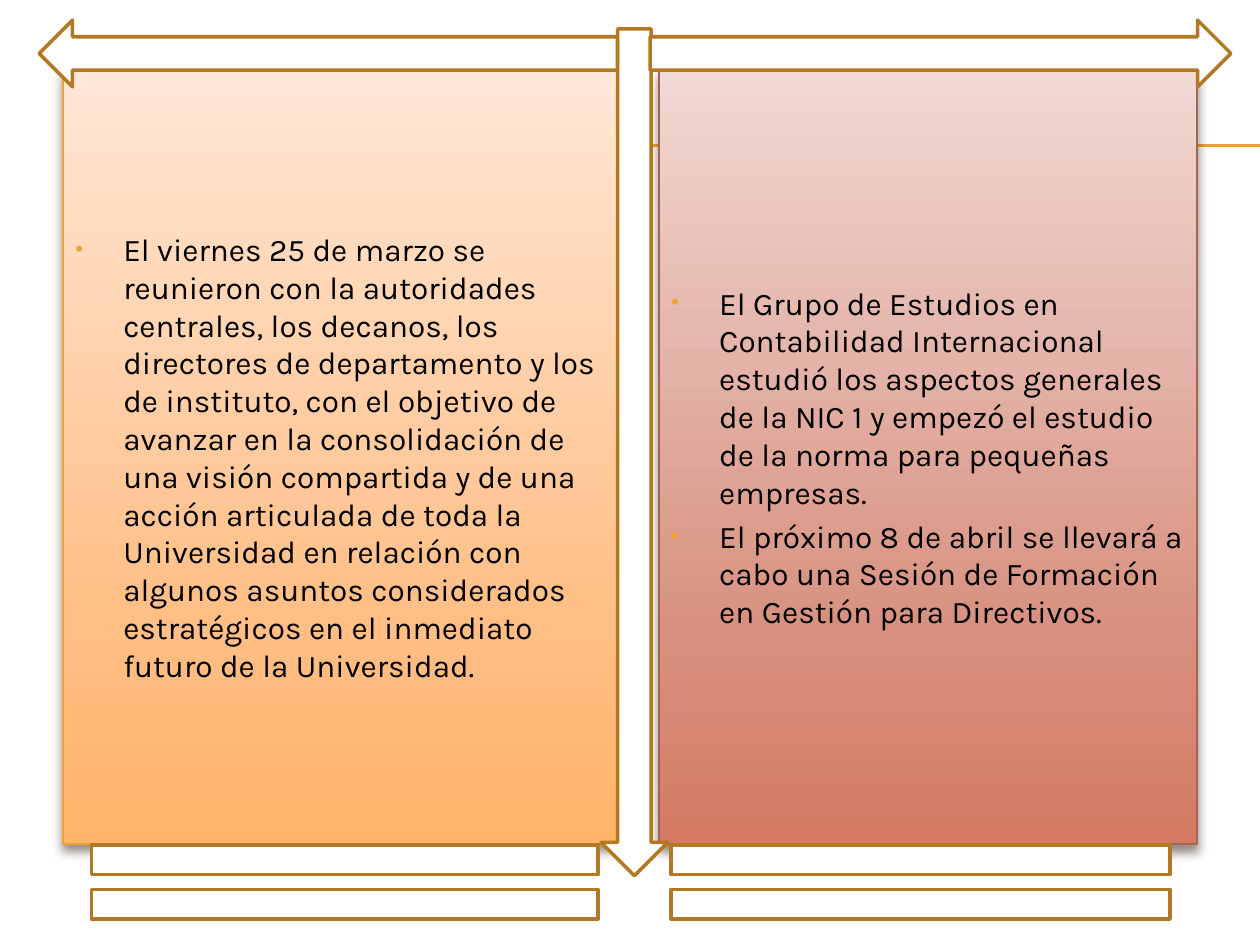
from copy import deepcopy

from pptx import Presentation
from pptx.dml.color import RGBColor
from pptx.enum.shapes import MSO_CONNECTOR, MSO_SHAPE
from pptx.enum.text import MSO_ANCHOR, PP_ALIGN
from pptx.oxml.ns import qn
from pptx.util import Inches, Pt
from lxml.etree import SubElement


def color(value):
    return RGBColor.from_string(value)


class Sheet:
    font = "Karla"
    text_size = 18
    accent = "F0A22E"
    outline = "B27822"
    shadow = "4E3B30"

    def __init__(self, page):
        self.page = page

    def rule(self, top):
        line = self.page.shapes.add_connector(
            MSO_CONNECTOR.STRAIGHT, Inches(0.56), Inches(top), Inches(10), Inches(top)
        )
        line.line.color.rgb = color(self.accent)
        line.line.width = Pt(0.75)
        SubElement(line.element.spPr, qn("a:effectLst"))

    def shape(self, kind, left, top, width, height, line, weight):
        shape = self.page.shapes.add_shape(
            kind, Inches(left), Inches(top), Inches(width), Inches(height)
        )
        shape.line.color.rgb = color(line)
        shape.line.width = Pt(weight)
        shape.shadow.inherit = False
        return shape

    def symbol(self, kind, left, top, width, height):
        shape = self.shape(kind, left, top, width, height, self.outline, 2)
        shape.fill.solid()
        shape.fill.fore_color.rgb = color("FFFFFF")

    def gradient(self, shape, stops):
        shape.fill.gradient()
        shape.fill.gradient_angle = 270
        stop_list = shape.element.spPr.find(qn("a:gradFill")).find(qn("a:gsLst"))
        stop_list.append(deepcopy(stop_list[0]))
        for stop, (position, value) in zip(shape.fill.gradient_stops, stops):
            stop.position = position
            stop.color.rgb = color(value)

    def drop_shadow(self, shape):
        effects = shape.element.spPr.find(qn("a:effectLst"))
        outer = SubElement(
            effects, qn("a:outerShdw"), blurRad=str(Pt(6)), dist=str(Pt(4)),
            dir="5400000", rotWithShape="0",
        )
        tint = SubElement(outer, qn("a:srgbClr"), val=self.shadow)
        SubElement(tint, qn("a:alpha"), val="60000")

    def bullet(self, para):
        properties = para._p.get_or_add_pPr()
        properties.set("marL", str(Inches(0.38)))
        properties.set("indent", str(-Inches(0.38)))
        tint = SubElement(properties, qn("a:buClr"))
        SubElement(tint, qn("a:srgbClr"), val=self.accent)
        SubElement(properties, qn("a:buSzPct"), val="70000")
        SubElement(properties, qn("a:buFont"), typeface="Arial")
        SubElement(properties, qn("a:buChar"), char="•")

    def panel(self, left, width, line, stops, texts):
        box = self.shape(MSO_SHAPE.RECTANGLE, left, 0.55, width, 6.15, line, 0.79)
        self.gradient(box, stops)
        self.drop_shadow(box)
        frame = box.text_frame
        frame.word_wrap = True
        frame.vertical_anchor = MSO_ANCHOR.MIDDLE
        frame.text = "\n".join(texts)
        for index, para in enumerate(frame.paragraphs):
            self.bullet(para)
            para.alignment = PP_ALIGN.LEFT
            if index:
                para.space_before = Pt(3.6)
            for span in para.runs:
                span.font.name = self.font
                span.font.size = Pt(self.text_size)
                span.font.color.rgb = color("000000")


def main():
    deck = Presentation()
    deck.slide_width = Inches(10)
    deck.slide_height = Inches(7.5)
    sheet = Sheet(deck.slides.add_slide(deck.slide_layouts[6]))

    for top in (1.15, 1.16):
        sheet.rule(top)

    sheet.panel(
        0.5, 4.42, "F0A22E",
        [(0, "FFE7D7"), (0.72, "FFBE84"), (1, "FFB468")],
        [
            "El viernes 25 de marzo se reunieron con la autoridades centrales, "
            "los decanos, los directores de departamento y los de instituto, "
            "con el objetivo de avanzar en la consolidación de una visión "
            "compartida y de una acción articulada de toda la Universidad en "
            "relación con algunos asuntos considerados estratégicos en el "
            "inmediato futuro de la Universidad."
        ],
    )
    sheet.panel(
        5.23, 4.27, "A5644E",
        [(0, "F1D9D4"), (0.72, "D89180"), (1, "D47A62")],
        [
            "El Grupo de Estudios en Contabilidad Internacional estudió los "
            "aspectos generales de la NIC 1 y empezó el estudio de la norma "
            "para pequeñas empresas.",
            "El próximo 8 de abril se llevará a cabo una Sesión de Formación "
            "en Gestión para Directivos.",
        ],
    )

    sheet.symbol(MSO_SHAPE.DOWN_ARROW, 4.77, 0.23, 0.53, 6.72)
    sheet.symbol(MSO_SHAPE.RIGHT_ARROW, 5.16, 0.16, 4.61, 0.53)
    sheet.symbol(MSO_SHAPE.LEFT_ARROW, 0.31, 0.16, 4.59, 0.53)
    for left, width in ((0, 5.47), (4.61, 5.39)):
        sheet.symbol(MSO_SHAPE.MATH_EQUAL, left, 6.5, width, 1)

    deck.save("out.pptx")


if __name__ == "__main__":
    main()
